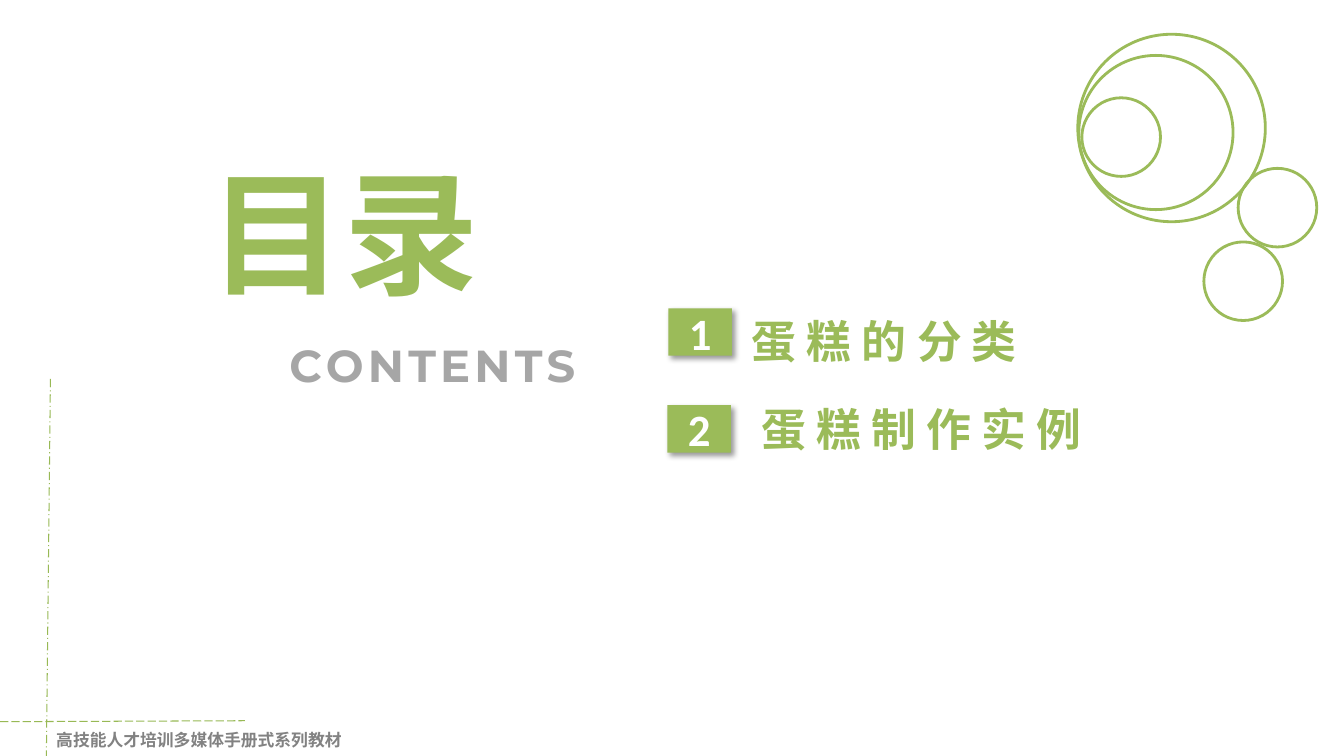
from lxml import etree
from pptx import Presentation
from pptx.dml.color import RGBColor
from pptx.enum.dml import MSO_LINE
from pptx.enum.shapes import MSO_CONNECTOR, MSO_SHAPE
from pptx.enum.text import MSO_ANCHOR, MSO_AUTO_SIZE, PP_ALIGN
from pptx.oxml.ns import qn
from pptx.util import Pt

PX = 9144  # 100 px to the inch
LEFT, CENTER = PP_ALIGN.LEFT, PP_ALIGN.CENTER
TOP, MIDDLE = MSO_ANCHOR.TOP, MSO_ANCHOR.MIDDLE
RECT, OVAL = MSO_SHAPE.RECTANGLE, MSO_SHAPE.OVAL
STRAIGHT = MSO_CONNECTOR.STRAIGHT
CJK = "Noto Sans CJK SC"
COLORS = {k: RGBColor.from_string(v) for k, v in {
    "green": "9BBB59", "guide": "98B955", "gray": "A6A6A6",
    "footer": "828282", "white": "FFFFFF"}.items()}


def write(sp, text, size, font, color, align=LEFT, anchor=TOP, wrap=True):
    """Put one bold line into a shape and return its run."""
    tf = sp.text_frame
    for name, value in {"auto_size": MSO_AUTO_SIZE.NONE, "word_wrap": wrap,
                        "vertical_anchor": anchor}.items():
        setattr(tf, name, value)
    p = tf.paragraphs[0]
    p.alignment = align
    r = p.add_run()
    r.text = text
    for name, value in {"size": Pt(size), "name": font, "bold": True}.items():
        setattr(r.font, name, value)
    r.font.color.rgb = COLORS[color]
    etree.SubElement(r.font._element, qn("a:ea")).set("typeface", CJK)
    return r


def soft_shadow():
    effects = etree.Element(qn("a:effectLst"))
    shadow = etree.SubElement(effects, qn("a:outerShdw"), blurRad=str(Pt(4)),
                              dist=str(Pt(3)), dir="2700000", algn="tl", rotWithShape="0")
    black = etree.SubElement(shadow, qn("a:srgbClr"), val="000000")
    etree.SubElement(black, qn("a:alpha"), val="40000")
    return effects


prs = Presentation()
prs.slide_width, prs.slide_height = 1333 * PX, 750 * PX
s = prs.slides.add_slide(prs.slide_layouts[5])

title = s.shapes.title
for name, value in {"left": 134, "top": 144, "width": 415, "height": 172}.items():
    setattr(title, name, value * PX)
r = write(title, "目录", 96, CJK, "green", CENTER)
r.font._element.find(qn("a:solidFill")).addnext(soft_shadow())

# Captions and agenda entries
for box, text, size, font, color, align, wrap in [
    ((196, 330, 466, 64), "CONTENTS", 32, "Montserrat", "gray", CENTER, True),
    ((736, 306, 297, 64), "蛋 糕 的 分 类", 32, CJK, "green", LEFT, True),
    ((745, 394, 346, 64), "蛋 糕 制 作 实 例", 32, CJK, "green", LEFT, True),
    ((46, 719, 306, 30), "高技能人才培训多媒体手册式系列教材", 12,
     "Times New Roman", "footer", LEFT, False),
]:
    sp = s.shapes.add_textbox(*(v * PX for v in box))
    r = write(sp, text, size, font, color, align, wrap=wrap)
    if text == "CONTENTS":
        r.font._element.set("spc", "300")

# Number tiles
for number, left, top in [("1", 663, 306), ("2", 662, 402)]:
    sp = s.shapes.add_shape(RECT, left * PX, top * PX, 63 * PX, 47 * PX)
    sp.fill.solid()
    sp.fill.fore_color.rgb = COLORS["green"]
    sp.line.fill.background()
    sp._element.spPr.append(soft_shadow())
    write(sp, number, 32, "Calibri", "white", CENTER, MIDDLE)

# Circles in the corner
for left, top, size in [(1069, 34, 186), (1070, 55, 153), (1228, 167, 78),
                        (1073, 97, 78), (1194, 240, 78)]:
    sp = s.shapes.add_shape(OVAL, left * PX, top * PX, size * PX, size * PX)
    sp.shadow.inherit = False
    sp.fill.background()
    sp.line.color.rgb = COLORS["green"]
    sp.line.width = Pt(2)

# Dashed guides
for ends, dash in [((50, 376, 46, 750), MSO_LINE.LONG_DASH_DOT),
                   ((0, 716, 243, 715), MSO_LINE.LONG_DASH)]:
    guide = s.shapes.add_connector(STRAIGHT, *(v * PX for v in ends))
    guide.line.color.rgb = COLORS["guide"]
    guide.line.width = Pt(0.75)
    guide.line.dash_style = dash
    etree.SubElement(guide._element.spPr, qn("a:effectLst"))

prs.save("out.pptx")
